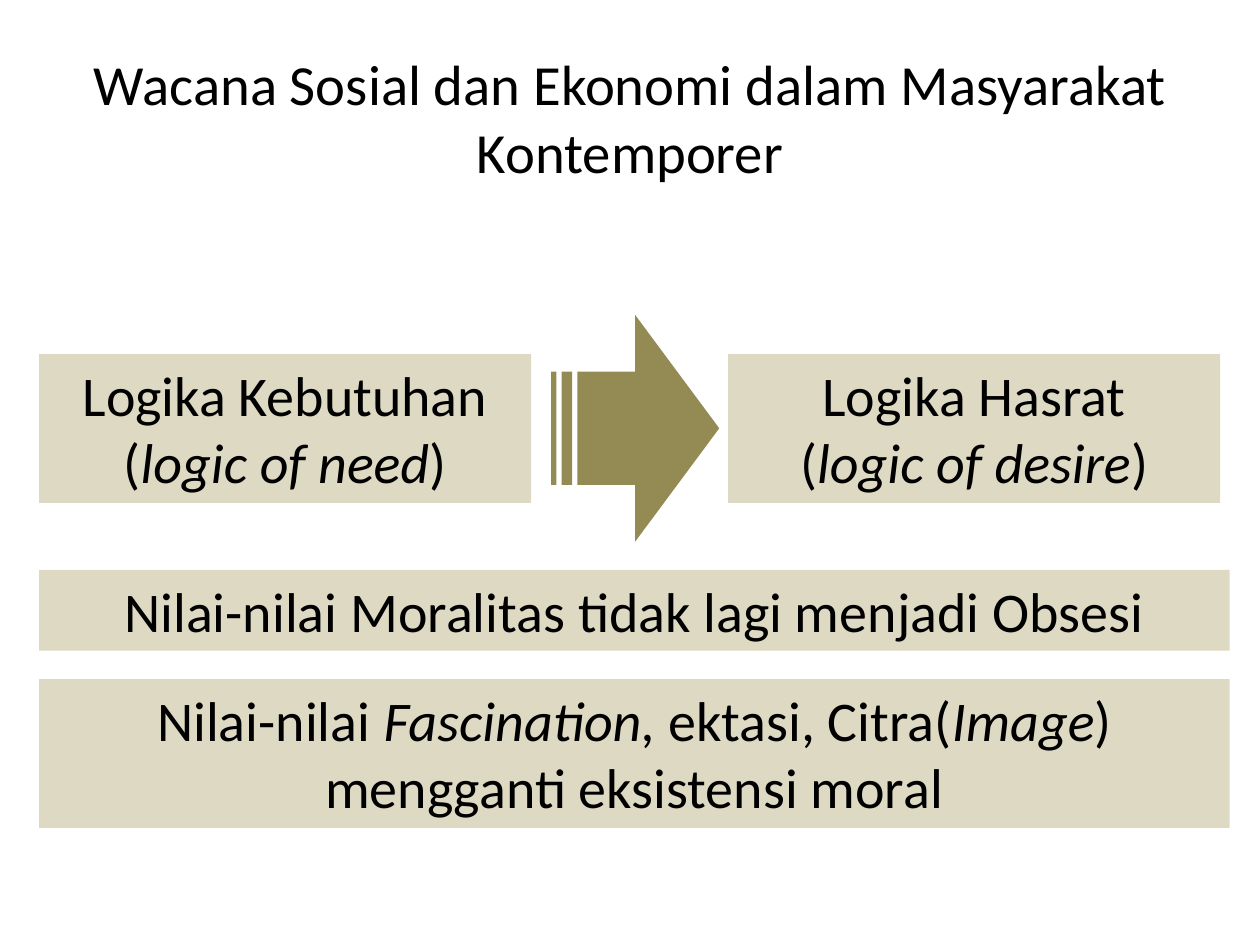
from pptx import Presentation
from pptx.dml.color import RGBColor
from pptx.enum import shapes, text
from pptx.util import Cm, Pt

# Content: paragraphs are lists of (wording, italic) spans
TITLE = "Wacana Sosial dan Ekonomi dalam Masyarakat Kontemporer"
NEED = [[("Logika Kebutuhan", False)],
        [("(", False), ("logic of need", True), (")", False)]]
DESIRE = [[("Logika Hasrat", False)],
          [("(", False), ("logic of desire", True), (")", False)]]
MORALITY = [[("Nilai-nilai Moralitas tidak lagi menjadi Obsesi", False)]]
FASCINATION = [[("Nilai-nilai ", False), ("Fascination, ", True),
                ("ektasi, Citra(", False), ("Image", True),
                (") mengganti eksistensi moral", False)]]

# Layout in centimetres
LEFT, HALF, FULL = 0.79, 9.92, 24.0
ONE_LINE, TWO_LINES = 1.63, 3.0
PANELS = [
    (NEED, LEFT, 7.14, HALF, TWO_LINES),
    (DESIRE, 14.68, 7.14, HALF, TWO_LINES),
    (MORALITY, LEFT, 11.49, FULL, ONE_LINE),
    (FASCINATION, LEFT, 13.69, FULL, TWO_LINES),
]
ARROW = (11.11, 6.35, 3.39, 4.57)
FONT, INK, SAND, OLIVE = "Calibri", "000000", "DDD9C3", "948A54"


def color(value):
    return RGBColor.from_string(value)


def style(para, size):
    para.alignment = text.PP_ALIGN.CENTER
    para.font.name = FONT
    para.font.size = Pt(size)
    para.font.color.rgb = color(INK)


def add_block(page, kind, place, fill):
    block = page.shapes.add_shape(kind, *map(Cm, place))
    block.shadow.inherit = False
    block.fill.solid()
    block.fill.fore_color.rgb = color(fill)
    block.line.fill.background()
    return block


def add_panel(page, paragraphs, *place):
    frame = add_block(page, shapes.MSO_SHAPE.RECTANGLE, place, SAND).text_frame
    frame.word_wrap = True
    frame.auto_size = text.MSO_AUTO_SIZE.SHAPE_TO_FIT_TEXT
    frame.vertical_anchor = text.MSO_ANCHOR.TOP
    for index, spans in enumerate(paragraphs):
        para = frame.add_paragraph() if index else frame.paragraphs[0]
        style(para, 32)
        for wording, italic in spans:
            span = para.add_run()
            span.text = wording
            if italic:
                span.font.italic = True


deck = Presentation()
deck.slide_width, deck.slide_height = Cm(25.4), Cm(19.05)
page = deck.slides.add_slide(deck.slide_layouts[5])

# Title
title = page.shapes.title
title.left, title.top, title.width, title.height = map(
    Cm, (1.27, 0.76, 22.86, 3.18))
title.text_frame.text = TITLE
title.text_frame.word_wrap = True
title.text_frame.auto_size = text.MSO_AUTO_SIZE.NONE
title.text_frame.vertical_anchor = text.MSO_ANCHOR.MIDDLE
style(title.text_frame.paragraphs[0], 32.4)

# Panels and the arrow from need to desire
for panel in PANELS:
    add_panel(page, *panel)
add_block(page, shapes.MSO_SHAPE.STRIPED_RIGHT_ARROW, ARROW, OLIVE)

deck.save("out.pptx")
